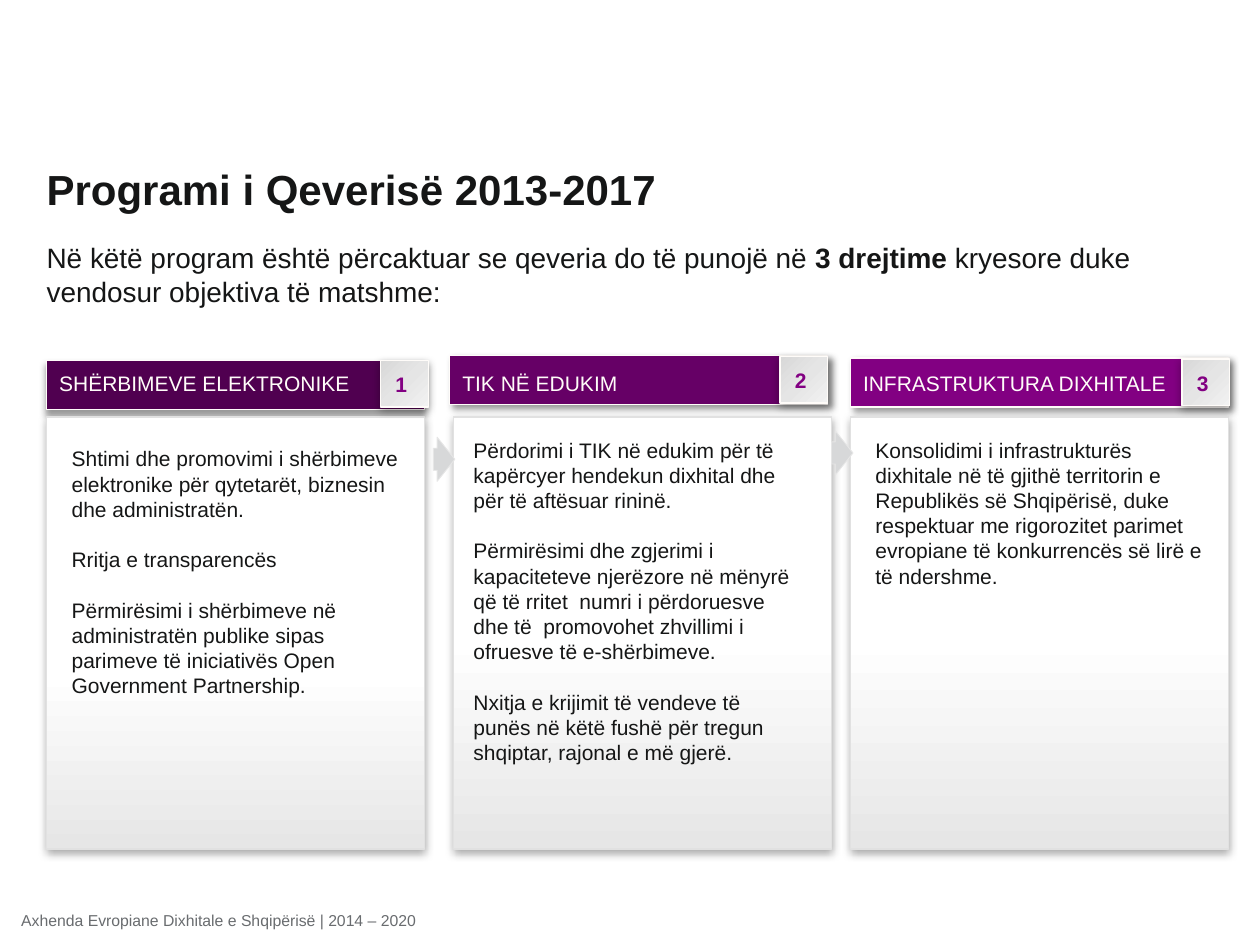
from dataclasses import dataclass

from pptx import Presentation
from pptx.dml.color import RGBColor
from pptx.enum.shapes import MSO_SHAPE as Preset
from pptx.enum.text import MSO_ANCHOR as Anchor, MSO_AUTO_SIZE as AutoSize, PP_ALIGN as Align
from pptx.oxml.ns import qn
from pptx.util import Inches, Pt
from lxml.etree import SubElement


@dataclass(frozen=True)
class Theme:
    font: str = "Arial"
    text: str = "151616"
    footer: str = "696C6F"
    light: str = "FFFCF9"
    accent: str = "820082"
    shadow: str = "000000"
    panel_line: str = "E1E1E1"
    arrow: str = "D7D8D9"
    arrow_line: str = "E6E6E6"
    badge_stops: tuple = ((0, "D8D8D8"), (50, "E5E5E5"), (100, "F2F2F2"))
    title_size: int = 24
    intro_size: int = 16
    body_size: int = 12
    footer_size: int = 9
    paragraph_gap: float = 14.4

    def panel_stops(self, middle):
        return (0, "E6E6E6"), (middle, "FFFFFF"), (100, "FFFFFF")


@dataclass(frozen=True)
class Column:
    number: str
    heading: str
    color: str
    paragraphs: tuple
    panel_left: float
    header_left: float
    header_top: float
    badge_left: float
    badge_top: float
    text_box: tuple
    shadow_angle: int = 45
    white_from: int = 49


THEME = Theme()
PANEL_TOP, PANEL_WIDTH, PANEL_HEIGHT = 3.31, 3, 3.43
HEADER_HEIGHT, LABEL_TOP = 0.39, 2.91

COLUMNS = (
    Column("1", "SHËRBIMEVE ELEKTRONIKE", "500050", (
        "Shtimi dhe promovimi i shërbimeve elektronike për qytetarët, biznesin dhe administratën.",
        "Rritja e transparencës",
        "Përmirësimi i shërbimeve në administratën publike sipas parimeve të iniciativës "
        "Open Government Partnership.",
    ), 0.37, 0.37, 2.86, 3.02, 2.86, (0.47, 3.49, 2.91, 2.32), 90, 41),
    Column("2", "TIK NË EDUKIM", "660066", (
        "Përdorimi i TIK në edukim për të kapërcyer hendekun dixhital dhe për të aftësuar rininë.",
        "Përmirësimi dhe zgjerimi i kapaciteteve njerëzore në mënyrë që të rritet  numri i "
        "përdoruesve dhe të  promovohet zhvillimi i ofruesve të e-shërbimeve.",
        "Nxitja e krijimit të vendeve të punës në këtë fushë për tregun shqiptar, rajonal "
        "e më gjerë.",
    ), 3.6, 3.57, 2.82, 6.19, 2.83, (3.66, 3.42, 2.8, 2.93)),
    Column("3", "INFRASTRUKTURA DIXHITALE", "820082", (
        "Konsolidimi i infrastrukturës dixhitale në të gjithë territorin e Republikës së "
        "Shqipërisë, duke respektuar me rigorozitet parimet evropiane të konkurrencës së "
        "lirë e të ndershme.",
    ), 6.75, 6.75, 2.84, 9.38, 2.85, (6.85, 3.42, 2.8, 1.51)),
)


def place(shape, box):
    shape.left, shape.top, shape.width, shape.height = map(Inches, box)


def style_text(shape, size, color, bold=False, align=Align.LEFT, anchor=Anchor.TOP,
               side=0.1, edge=0.05, line_spacing=None, gap=0):
    """Format a frame that already holds its text; gap separates paragraphs."""
    frame = shape.text_frame
    frame.auto_size = AutoSize.NONE
    frame.word_wrap = True
    frame.vertical_anchor = anchor
    frame.margin_left = frame.margin_right = Inches(side)
    frame.margin_top = frame.margin_bottom = Inches(edge)
    for index, paragraph in enumerate(frame.paragraphs):
        paragraph.alignment = align
        paragraph.space_before = Pt(gap if index else 0)
        if line_spacing:
            paragraph.line_spacing = line_spacing
        for run in paragraph.runs:
            run.font.name = THEME.font
            run.font.size = Pt(size)
            run.font.bold = bold
            run.font.color.rgb = RGBColor.from_string(color)


def add_text(slide, box, text, size, color, **options):
    shape = slide.shapes.add_textbox(*map(Inches, box))
    shape.text_frame.text = text
    style_text(shape, size, color, **options)


def add_block(slide, preset, box, line, line_width=0.75, fill=None, stops=None, angle=0,
              shadow=None):
    """Add a shape; shadow is (alpha %, blur pt, distance pt, direction degrees)."""
    shape = slide.shapes.add_shape(preset, *map(Inches, box))
    shape.line.color.rgb = RGBColor.from_string(line)
    shape.line.width = Pt(line_width)
    shape.shadow.inherit = False
    properties = shape.element.spPr
    if stops:
        shape.fill.gradient()
        shape.fill.gradient_angle = angle
        stop_list = properties.find(".//" + qn("a:gsLst"))
        for stop in list(stop_list):
            stop_list.remove(stop)
        for position, color in stops:
            stop = SubElement(stop_list, qn("a:gs"), pos=str(position * 1000))
            SubElement(stop, qn("a:srgbClr"), val=color)
    else:
        shape.fill.solid()
        shape.fill.fore_color.rgb = RGBColor.from_string(fill)
    if shadow:
        alpha, blur, distance, direction = shadow
        outer = SubElement(properties.find(qn("a:effectLst")), qn("a:outerShdw"),
                           blurRad=str(Pt(blur)), dist=str(Pt(distance)),
                           dir=str(direction * 60000), rotWithShape="0")
        color = SubElement(outer, qn("a:srgbClr"), val=THEME.shadow)
        SubElement(color, qn("a:alpha"), val=str(alpha * 1000))
    return shape


def fill_title(slide, box):
    title = slide.shapes.title
    place(title, box)
    title.text_frame.text = "Programi i Qeverisë 2013-2017"
    style_text(title, THEME.title_size, THEME.text, bold=True, anchor=Anchor.MIDDLE,
               side=0, line_spacing=0.95)


def fill_intro(slide, box):
    intro = slide.placeholders[1]
    place(intro, box)
    paragraph = intro.text_frame.paragraphs[0]
    properties = paragraph._p.get_or_add_pPr()
    properties.set("marL", "0")
    properties.set("indent", "0")
    SubElement(properties, qn("a:buNone"))
    for text in ("Në këtë program është përcaktuar se qeveria do të punojë në ",
                 "3 drejtime ", "kryesore duke vendosur objektiva të matshme:"):
        paragraph.add_run().text = text
    style_text(intro, THEME.intro_size, THEME.text, side=0, edge=0)
    paragraph.runs[1].font.bold = True


def add_badge(slide, left, top, number):
    add_block(slide, Preset.RECTANGLE, (left, top, 0.38, 0.37), THEME.light,
              stops=THEME.badge_stops, angle=315, shadow=(35, 5, 1.8, 90))
    add_text(slide, (left - 0.01, top + 0.04, 0.35, 0.3), number, THEME.body_size,
             THEME.accent, bold=True, align=Align.CENTER)


def add_column(slide, column):
    add_block(slide, Preset.RECTANGLE,
              (column.header_left, column.header_top, PANEL_WIDTH, HEADER_HEIGHT),
              THEME.light, fill=column.color, shadow=(40, 4, 3, column.shadow_angle))
    add_block(slide, Preset.RECTANGLE,
              (column.panel_left, PANEL_TOP, PANEL_WIDTH, PANEL_HEIGHT), THEME.panel_line,
              stops=THEME.panel_stops(column.white_from), angle=90, shadow=(35, 5, 1.8, 90))
    add_text(slide, column.text_box, "\n".join(column.paragraphs), THEME.body_size,
             THEME.text, gap=THEME.paragraph_gap)
    add_text(slide, (column.header_left + 0.1, LABEL_TOP, 2.9, 0.28), column.heading,
             THEME.body_size, THEME.light, anchor=Anchor.MIDDLE, side=0, line_spacing=0.95)
    add_badge(slide, column.badge_left, column.badge_top, column.number)


def add_arrow(slide, left, top):
    arrow = add_block(slide, Preset.RIGHT_ARROW, (left, top, 0.17, 0.35),
                      THEME.arrow_line, 0.5, fill=THEME.arrow)
    arrow.adjustments[0] = 0.5
    arrow.adjustments[1] = 0.825


def main():
    presentation = Presentation()
    presentation.slide_width, presentation.slide_height = Inches(10), Inches(7.5)
    slide = presentation.slides.add_slide(presentation.slide_layouts[1])
    add_text(slide, (0.07, 7.18, 8.01, 0.3),
             "Axhenda Evropiane Dixhitale e Shqipërisë | 2014 – 2020",
             THEME.footer_size, THEME.footer)
    fill_title(slide, (0.37, 1.19, 8.56, 0.66))
    fill_intro(slide, (0.37, 1.91, 9.28, 0.54))
    for column in COLUMNS:
        add_column(slide, column)
    for left, top in ((3.44, 3.47), (6.6, 3.42)):
        add_arrow(slide, left, top)
    presentation.save("out.pptx")


if __name__ == "__main__":
    main()
